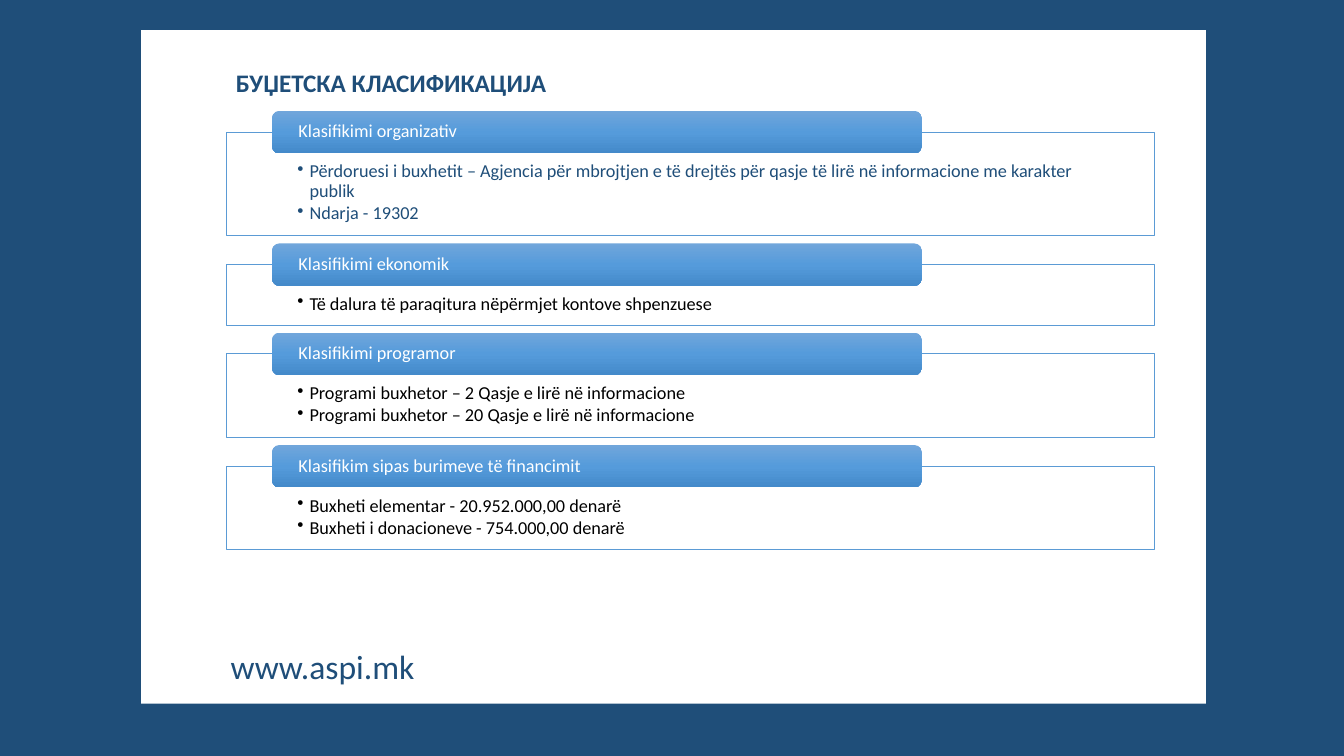
from dataclasses import dataclass

from lxml.etree import SubElement
from pptx import Presentation
from pptx.dml.color import RGBColor
from pptx.enum.shapes import MSO_SHAPE as Shape
from pptx.enum.text import MSO_ANCHOR as Anchor, MSO_AUTO_SIZE as AutoSize, PP_ALIGN as Align
from pptx.oxml.ns import qn
from pptx.util import Inches, Pt


@dataclass(frozen=True)
class Theme:
    font: str = "Calibri"
    navy: str = "1F4E79"
    white: str = "FFFFFF"
    black: str = "000000"
    outline: str = "5B9BD5"
    header_stops: tuple = ((0, "71A6DB"), (50, "559BDB"), (100, "448ACA"))
    title_size: float = 18
    site_size: float = 24
    body_size: float = 13


THEME = Theme()
WIDTH, HEIGHT = 13.33, 7.5

# Layout of the stacked sections, in inches
SECTION_LEFT, SECTION_WIDTH = 2.24, 9.21
SECTION_TOP, SECTION_GAP = 1.31, 0.285
HEADER_LEFT, HEADER_WIDTH, HEADER_HEIGHT = 2.7, 6.44, 0.42
BODY_HEIGHTS = {1: 0.6, 2: 0.83, 3: 1.03}  # by number of text lines

# Header, text colour, number of text lines, bullets
SECTIONS = (
    ("Klasifikimi organizativ", THEME.navy, 3, (
        "Përdoruesi i buxhetit – Agjencia për mbrojtjen e të drejtës për qasje "
        "të lirë në informacione me karakter publik",
        "Ndarja - 19302")),
    ("Klasifikimi ekonomik", THEME.black, 1, (
        "Të dalura të paraqitura nëpërmjet kontove shpenzuese",)),
    ("Klasifikimi programor", THEME.black, 2, (
        "Programi buxhetor – 2 Qasje e lirë në informacione",
        "Programi buxhetor – 20 Qasje e lirë në informacione")),
    ("Klasifikim sipas burimeve të financimit", THEME.black, 2, (
        "Buxheti elementar - 20.952.000,00 denarë",
        "Buxheti i donacioneve - 754.000,00 denarë")),
)


def add_block(slide, kind, box, color=None):
    shape = slide.shapes.add_shape(kind, *map(Inches, box))
    shape.shadow.inherit = False
    shape.line.fill.background()
    if color:
        shape.fill.solid()
        shape.fill.fore_color.rgb = RGBColor.from_string(color)
    return shape


def style_paragraph(paragraph, size, color, bold=False):
    paragraph.alignment = Align.LEFT
    font = paragraph.font
    font.name, font.size, font.bold = THEME.font, Pt(size), bold
    font.color.rgb = RGBColor.from_string(color)


def set_insets(frame, side, top, bottom):
    frame.word_wrap = True
    frame.margin_left = frame.margin_right = Inches(side)
    frame.margin_top, frame.margin_bottom = Inches(top), Inches(bottom)


def add_label(slide, text, box, size, bold=False):
    frame = slide.shapes.add_textbox(*map(Inches, box)).text_frame
    frame.word_wrap = False
    frame.auto_size = AutoSize.SHAPE_TO_FIT_TEXT
    frame.text = text
    style_paragraph(frame.paragraphs[0], size, THEME.navy, bold)


def add_bullet(paragraph):
    properties = paragraph._p.get_or_add_pPr()
    properties.set("marL", str(Inches(0.12)))
    properties.set("indent", str(-Inches(0.12)))
    SubElement(properties, qn("a:buChar"), char="•")


def add_body(slide, top, height, color, bullets):
    box = (SECTION_LEFT, top, SECTION_WIDTH, height)
    shape = add_block(slide, Shape.RECTANGLE, box, THEME.white)
    fill_color = shape._element.spPr.find(f"{qn('a:solidFill')}/{qn('a:srgbClr')}")
    SubElement(fill_color, qn("a:alpha"), val="90000")
    shape.line.color.rgb = RGBColor.from_string(THEME.outline)
    shape.line.width = Pt(0.5)
    frame = shape.text_frame
    set_insets(frame, 0.71, 0.3, 0.1)
    frame.vertical_anchor = Anchor.TOP
    frame.text = "\n".join(bullets)
    for paragraph in frame.paragraphs:
        add_bullet(paragraph)
        paragraph.line_spacing = 0.9
        paragraph.space_after = Pt(1.8)
        style_paragraph(paragraph, THEME.body_size, color)


def add_header(slide, top, text):
    box = (HEADER_LEFT, top, HEADER_WIDTH, HEADER_HEIGHT)
    shape = add_block(slide, Shape.ROUNDED_RECTANGLE, box)
    shape.fill.gradient()
    shape.fill.gradient_angle = 270
    stops = shape._element.spPr.find(f"{qn('a:gradFill')}/{qn('a:gsLst')}")
    stops.clear()
    for position, color in THEME.header_stops:
        stop = SubElement(stops, qn("a:gs"), pos=str(position * 1000))
        SubElement(stop, qn("a:srgbClr"), val=color)
    frame = shape.text_frame
    set_insets(frame, 0.24, 0, 0)
    frame.vertical_anchor = Anchor.MIDDLE
    frame.text = text
    frame.paragraphs[0].line_spacing = 0.9
    style_paragraph(frame.paragraphs[0], THEME.body_size, THEME.white)


def main():
    presentation = Presentation()
    presentation.slide_width, presentation.slide_height = Inches(WIDTH), Inches(HEIGHT)
    slide = presentation.slides.add_slide(presentation.slide_layouts[6])

    # Navy frame and white page
    add_block(slide, Shape.RECTANGLE, (0, 0, WIDTH, HEIGHT), THEME.navy)
    add_block(slide, Shape.RECTANGLE, (1.4, 0.3, 10.56, 6.68), THEME.white)

    # Site address and title
    add_label(slide, "www.aspi.mk", (2.19, 6.36, 2.04, 0.5), THEME.site_size)
    add_label(slide, "БУЏЕТСКА КЛАСИФИКАЦИЈА", (2.24, 0.62, 3.31, 0.4),
              THEME.title_size, bold=True)

    # Sections, each header centred on the top edge of its body
    top = SECTION_TOP
    for header, color, lines, bullets in SECTIONS:
        height = BODY_HEIGHTS[lines]
        add_body(slide, top, height, color, bullets)
        add_header(slide, top - HEADER_HEIGHT / 2, header)
        top += height + SECTION_GAP

    presentation.save("out.pptx")


if __name__ == "__main__":
    main()
